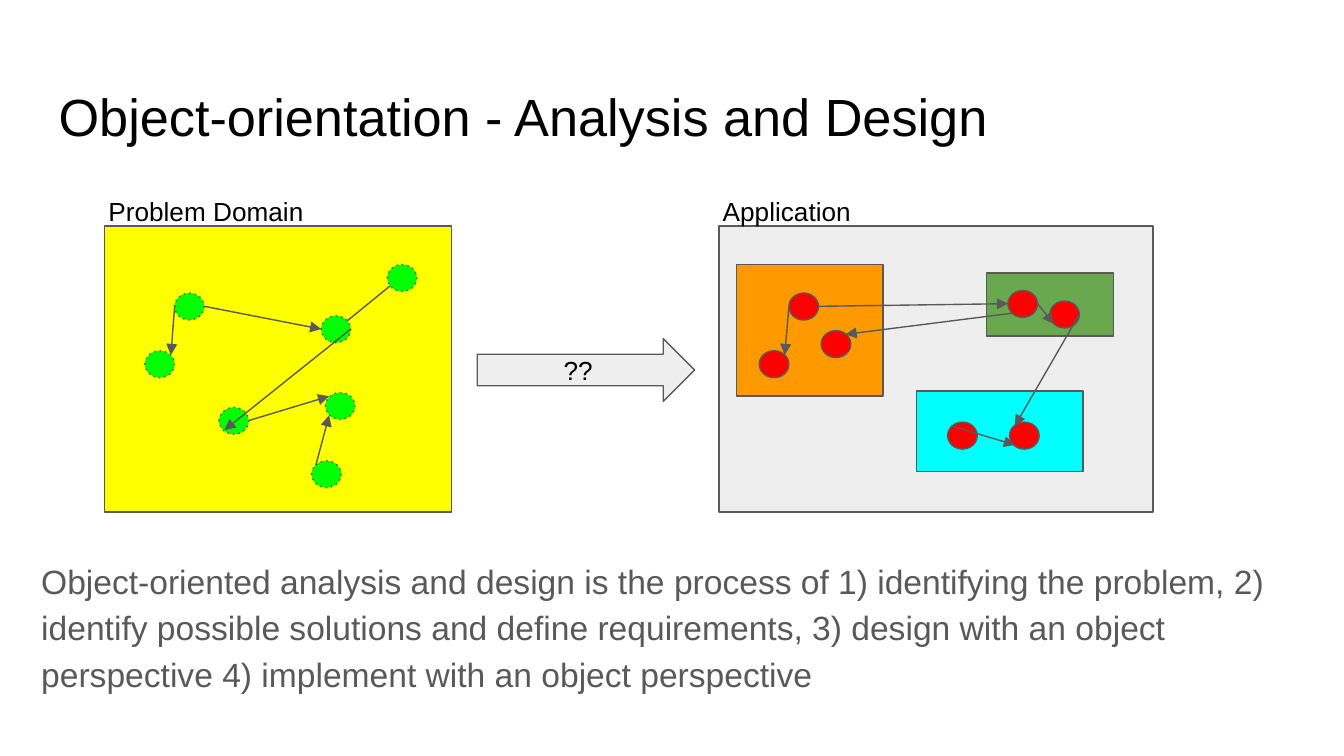
from lxml.etree import SubElement
from pptx import Presentation
from pptx.dml.color import RGBColor
from pptx.enum.dml import MSO_LINE
from pptx.enum.shapes import MSO_CONNECTOR, MSO_SHAPE
from pptx.enum.text import MSO_ANCHOR, PP_ALIGN
from pptx.oxml.ns import qn
from pptx.util import Cm, Pt

GRAY = "595959"
LIGHT = "EEEEEE"
CIRCLE_SIZE = (0.56, 0.51)
PANEL_TOP, PANEL_HEIGHT = 4.27, 5.41


def color(hex_string):
    return RGBColor.from_string(hex_string)


def style_line(line):
    line.color.rgb = color(GRAY)
    line.width = Pt(0.75)


def write(shape, text, size, hex_string="000000", anchor=MSO_ANCHOR.TOP):
    """Put one paragraph in a shape and return it."""
    frame = shape.text_frame
    frame.word_wrap = True
    frame.vertical_anchor = anchor
    frame.margin_left = frame.margin_right = Cm(0.25)
    frame.margin_top = frame.margin_bottom = Cm(0.25)
    paragraph = frame.paragraphs[0]
    run = paragraph.add_run()
    run.text = text
    run.font.name = "Arial"
    run.font.size = Pt(size)
    run.font.color.rgb = color(hex_string)
    return paragraph


def add_text(slide, box, *text_style):
    shape = slide.shapes.add_textbox(*map(Cm, box))
    return shape, write(shape, *text_style)


def add_box(slide, kind, box, fill):
    shape = slide.shapes.add_shape(kind, *map(Cm, box))
    shape.shadow.inherit = False
    shape.fill.solid()
    shape.fill.fore_color.rgb = color(fill)
    style_line(shape.line)
    return shape


def add_arrow(slide, ends):
    connector = slide.shapes.add_connector(MSO_CONNECTOR.STRAIGHT, *map(Cm, ends))
    style_line(connector.line)
    properties = connector._element.spPr
    SubElement(properties.find(qn("a:ln")), qn("a:tailEnd"), type="triangle")
    SubElement(properties, qn("a:effectLst"))


def add_panel(slide, caption, left, width, fill, areas, back_arrows,
              circles, circle_fill, dotted, front_arrows):
    """Captioned rectangle holding areas, object circles and their arrows."""
    add_box(slide, MSO_SHAPE.RECTANGLE, (left, PANEL_TOP, width, PANEL_HEIGHT), fill)
    for box, area_fill in areas:
        add_box(slide, MSO_SHAPE.RECTANGLE, box, area_fill)
    for ends in back_arrows:
        add_arrow(slide, ends)
    add_text(slide, (left - 0.18, 3.45, 10.19, 0.99), caption, 14)
    for position in circles:
        circle = add_box(slide, MSO_SHAPE.FLOWCHART_CONNECTOR,
                         position + CIRCLE_SIZE, circle_fill)
        if dotted:
            circle.line.dash_style = MSO_LINE.ROUND_DOT
            # Plain dots, as the preset dash named "dot"
            circle.line._ln.find(qn("a:prstDash")).set("val", "dot")
    for ends in front_arrows:
        add_arrow(slide, ends)


def main():
    presentation = Presentation()
    presentation.slide_width, presentation.slide_height = Cm(25.4), Cm(14.29)
    slide = presentation.slides.add_slide(presentation.slide_layouts[6])

    # Title
    title, _ = add_text(slide, (0.86, 1.24, 23.67, 1.6),
                        "Object-orientation - Analysis and Design", 28)
    title.text_frame.margin_top = Cm(0.35)

    # Application with its three modules
    add_panel(
        slide, "Application", 13.59, 8.2, LIGHT,
        areas=[((13.92, 5, 2.77, 2.49), "FF9900"),
               ((17.32, 7.39, 3.15, 1.52), "00FFFF"),
               ((18.64, 5.16, 2.41, 1.19), "6AA84F")],
        back_arrows=[(15.47, 5.79, 19.05, 5.74), (19.13, 5.92, 15.98, 6.32)],
        circles=[(17.91, 7.98), (19.05, 5.49), (14.35, 6.63), (14.91, 5.54),
                 (19.08, 7.98), (15.52, 6.25), (19.84, 5.69)],
        circle_fill="FF0000", dotted=False,
        front_arrows=[(19.61, 5.74, 19.91, 6.12), (20.4, 5.94, 19.18, 8.05),
                      (17.98, 8.05, 19.18, 8.41), (14.91, 5.79, 14.83, 6.71)])

    # Problem domain
    add_panel(
        slide, "Problem Domain", 1.98, 6.55, "FFFF00",
        areas=[],
        back_arrows=[(3.86, 5.79, 6.07, 6.22), (6.15, 6.4, 7.77, 5.08)],
        circles=[(5.89, 8.71), (6.07, 5.97), (2.74, 6.63), (3.3, 5.54),
                 (6.15, 7.42), (7.32, 5), (4.14, 7.7)],
        circle_fill="00FF00", dotted=True,
        front_arrows=[(6.63, 6.22, 4.24, 8.13), (4.7, 7.95, 6.22, 7.49),
                      (5.97, 8.79, 6.22, 7.85), (3.3, 5.79, 3.23, 6.71)])

    # Step from problem to application
    step = add_box(slide, MSO_SHAPE.RIGHT_ARROW, (9.02, 6.4, 4.11, 1.19), LIGHT)
    paragraph = write(step, "??", 14, "000000", MSO_ANCHOR.MIDDLE)
    paragraph.alignment = PP_ALIGN.CENTER

    # Explanation
    _, paragraph = add_text(
        slide, (0.53, 10.24, 24.31, 3.12),
        "Object-oriented analysis and design is the process of 1) identifying "
        "the problem, 2) identify possible solutions and define requirements, "
        "3) design with an object perspective 4) implement with an object "
        "perspective", 18, GRAY, MSO_ANCHOR.MIDDLE)
    paragraph.line_spacing = 1.15
    paragraph.space_after = Pt(16)

    presentation.save("out.pptx")


if __name__ == "__main__":
    main()
